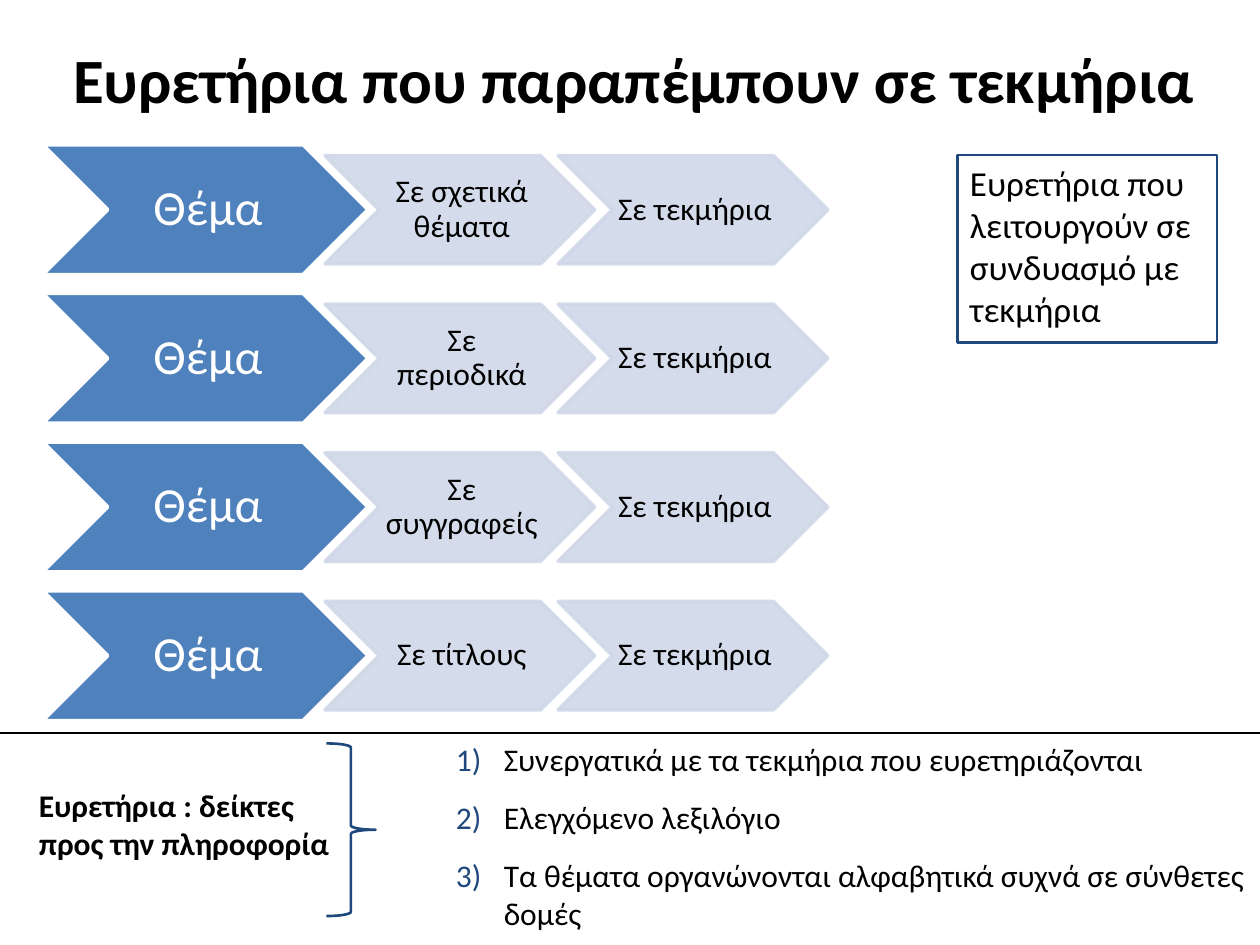
from lxml.etree import SubElement
from pptx import Presentation
from pptx.dml.color import RGBColor
from pptx.enum.shapes import MSO_CONNECTOR as Connector, MSO_SHAPE as Shape
from pptx.enum.text import MSO_ANCHOR as Anchor, MSO_AUTO_SIZE as AutoSize, PP_ALIGN as Align
from pptx.oxml.ns import qn
from pptx.util import Inches, Pt

TITLE = "Ευρετήρια που παραπέμπουν σε τεκμήρια"
ROWS = [
    ("Θέμα", "Σε σχετικά θέματα", "Σε τεκμήρια"),
    ("Θέμα", "Σε περιοδικά", "Σε τεκμήρια"),
    ("Θέμα", "Σε συγγραφείς", "Σε τεκμήρια"),
    ("Θέμα", "Σε τίτλους", "Σε τεκμήρια"),
]
CALLOUT = "Ευρετήρια που λειτουργούν σε συνδυασμό με τεκμήρια"
SUMMARY = "Ευρετήρια : δείκτες προς την πληροφορία"
POINTS = [
    "Συνεργατικά με τα τεκμήρια που ευρετηριάζονται",
    "Ελεγχόμενο λεξιλόγιο",
    "Τα θέματα οργανώνονται αλφαβητικά συχνά σε σύνθετες δομές",
]

THEME = {
    "font": "Calibri",
    "ink": "000000", "paper": "FFFFFF", "navy": "1F497D",
    "topic": "4F81BD", "target": "D0D8E8",
    "title": 36, "topic_size": 28, "callout": 20, "body": 18,
}

FIRST_ROW, ROW_PITCH, ROW_HEIGHT = 15.33, 15.73, 13.73
COLUMNS = [
    {"left": 3.4, "width": 25.8, "height": ROW_HEIGHT, "fill": "topic", "edge": "paper",
     "size": "topic_size", "ink": "paper", "opacity": 100, "inset": 0.04},
    *({"left": left, "width": 21.4, "height": 11.47, "fill": "target", "edge": "target",
       "size": "body", "ink": "ink", "opacity": 90, "inset": 0.03} for left in (25.8, 44.3)),
]

deck = Presentation()
deck.slide_width, deck.slide_height = Inches(10), Inches(7.5)
slide = deck.slides.add_slide(deck.slide_layouts[6])


def place(left, top, width, height):
    across, down = deck.slide_width / 100, deck.slide_height / 100
    return round(left * across), round(top * down), round(width * across), round(height * down)


def color(name):
    return RGBColor.from_string(THEME[name])


def write(paragraph, text, size, ink="ink", bold=False):
    run = paragraph.add_run()
    run.text = text
    run.font.name, run.font.size, run.font.bold = THEME["font"], Pt(THEME[size]), bold
    run.font.color.rgb = color(ink)


def add_text(area):
    frame = slide.shapes.add_textbox(*place(*area)).text_frame
    frame.word_wrap = True
    return frame


def add_outline(kind, area, edge, width, fill=None):
    outline = slide.shapes.add_shape(kind, *place(*area))
    outline.shadow.inherit = False
    outline.line.color.rgb, outline.line.width = color(edge), Pt(width)
    if fill:
        outline.fill.solid()
        outline.fill.fore_color.rgb = color(fill)
    else:
        outline.fill.background()
    return outline


def set_opacity(outline, percent):
    for tint in outline._element.spPr.iter(qn("a:srgbClr")):
        SubElement(tint, qn("a:alpha"), val=str(percent * 1000))


def add_chevron(text, row, column):
    top = FIRST_ROW + row * ROW_PITCH + (ROW_HEIGHT - column["height"]) / 2
    area = column["left"], top, column["width"], column["height"]
    chevron = add_outline(Shape.CHEVRON, area, column["edge"], 2, column["fill"])
    if column["opacity"] < 100:
        set_opacity(chevron, column["opacity"])
    frame = chevron.text_frame
    frame.word_wrap, frame.vertical_anchor = True, Anchor.MIDDLE
    frame.margin_left, frame.margin_right = Inches(column["inset"]), 0
    frame.margin_top = frame.margin_bottom = Inches(column["inset"] / 2)
    label = frame.paragraphs[0]
    label.alignment, label.line_spacing = Align.CENTER, 0.9
    write(label, text, column["size"], column["ink"])


def number(paragraph):
    props = paragraph._p.get_or_add_pPr()
    props.set("marL", str(Inches(0.38)))
    props.set("indent", str(-Inches(0.38)))
    paragraph.space_after = Pt(11.7)
    SubElement(SubElement(props, qn("a:buClr")), qn("a:srgbClr"), val=THEME["navy"])
    SubElement(props, qn("a:buFont"), typeface=THEME["font"])
    SubElement(props, qn("a:buAutoNum"), type="arabicParenR")


heading = add_text((0, 1.73, 100, 13.2))
heading.vertical_anchor = Anchor.MIDDLE
heading.paragraphs[0].alignment = Align.CENTER
heading.paragraphs[0]._p.get_or_add_pPr().set("marL", str(Inches(0.06)))
write(heading.paragraphs[0], TITLE, "title", bold=True)

for row, labels in enumerate(ROWS):
    for text, column in zip(labels, COLUMNS):
        add_chevron(text, row, column)

callout = add_outline(Shape.RECTANGLE, (76, 16.4, 20.6, 19.87), "navy", 1.5).text_frame
callout.word_wrap, callout.vertical_anchor = True, Anchor.TOP
callout.paragraphs[0].alignment = Align.LEFT
write(callout.paragraphs[0], CALLOUT, "callout")

left, top, width, _ = place(0, 77.6, 100, 0)
divider = slide.shapes.add_connector(Connector.STRAIGHT, left, top, left + width, top)
divider.line.color.rgb, divider.line.width = color("ink"), Pt(1)
SubElement(divider._element.spPr, qn("a:effectLst"))

points = add_text((35.2, 77.6, 65, 22.8))
points.auto_size = AutoSize.SHAPE_TO_FIT_TEXT
for index, text in enumerate(POINTS):
    point = points.add_paragraph() if index else points.paragraphs[0]
    number(point)
    write(point, text, "body")

summary = add_text((2.1, 82.53, 25.8, 10.53))
write(summary.paragraphs[0], SUMMARY, "body", bold=True)
add_outline(Shape.RIGHT_BRACE, (25.9, 78.67, 3.9, 18.27), "navy", 1.5)

deck.save("out.pptx")
